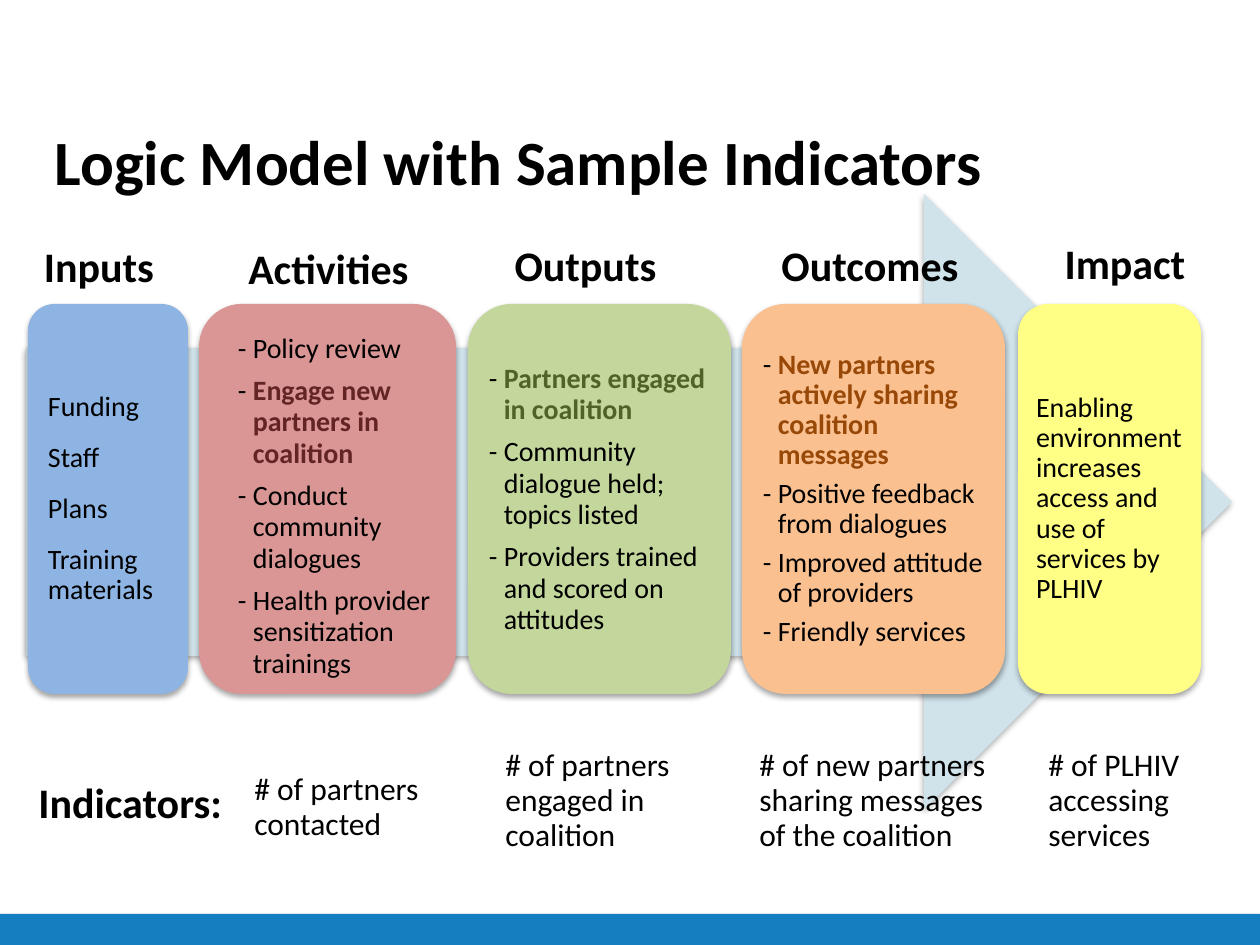
from lxml import etree
from pptx import Presentation
from pptx.dml.color import RGBColor
from pptx.enum.shapes import MSO_SHAPE
from pptx.enum.text import MSO_ANCHOR, MSO_AUTO_SIZE, PP_ALIGN
from pptx.oxml.ns import qn
from pptx.util import Emu, Pt

RECTANGLE = MSO_SHAPE.RECTANGLE
ROUNDED = MSO_SHAPE.ROUNDED_RECTANGLE
RIGHT_ARROW = MSO_SHAPE.RIGHT_ARROW
TOP, MIDDLE = MSO_ANCHOR.TOP, MSO_ANCHOR.MIDDLE
LEFT, CENTER = PP_ALIGN.LEFT, PP_ALIGN.CENTER
NO_FIT, GROW = MSO_AUTO_SIZE.NONE, MSO_AUTO_SIZE.SHAPE_TO_FIT_TEXT

EMU_PER_PX = 914400 / 126
FONT = "Calibri"
CARD_TOP, CARD_HEIGHT = 304, 390
CORNER_INSET = 0.29289 / 6
HANGING = 15
COLORS = {
    "text": "000000", "footer": "137FC1", "arrow": "D0E3EA",
    "inputs": "8EB4E3", "activities": "D99694", "outputs": "C3D69B",
    "outcomes": "FAC090", "impact": "FFFF85",
    "activities_key": "632523", "outputs_key": "4F6228", "outcomes_key": "984807",
}

# name, left, width, insets, line spacing, space after, dashed, key item, items
CARDS = [
    ("inputs", 28, 160, (20, 16, 16, 16), 0.9, 12, False, None,
     ["Funding", "Staff", "Plans", "Training materials"]),
    ("activities", 199, 257, (39, 52, 21, 39), Pt(18), 6, True, 1,
     ["Policy review", "Engage new partners in coalition",
      "Conduct community dialogues", "Health provider sensitization trainings"]),
    ("outputs", 468, 263, (21, 21, 21, 21), Pt(18), 6, True, 0,
     ["Partners engaged in coalition", "Community dialogue held; topics listed",
      "Providers trained and scored on attitudes"]),
    ("outcomes", 742, 263, (21, 21, 21, 21), 0.9, 5, True, 0,
     ["New partners actively sharing coalition messages",
      "Positive feedback from dialogues", "Improved attitude of providers",
      "Friendly services"]),
    ("impact", 1018, 183, (18, 18, 18, 18), 0.9, 5, False, None,
     ["Enabling environment increases access and use of services by PLHIV"]),
]
HEADINGS = [
    ("Inputs", 26, 234, 146), ("Activities", 210, 236, 237),
    ("Outputs", 467, 233, 237), ("Outcomes", 746, 233, 248),
    ("Impact", 1037, 231, 176),
]
INDICATORS = [
    ("# of partners contacted", 242, 766, 212, 83),
    ("# of partners engaged in coalition", 493, 742, 222, 118),
    ("# of new partners sharing messages of the coalition", 747, 742, 281, 118),
    ("# of PLHIV accessing services", 1036, 742, 163, 118),
]


def px(length):
    """Turn pixels into EMU."""
    return Emu(round(length * EMU_PER_PX))


def color(name):
    """Look up a named colour."""
    return RGBColor.from_string(COLORS[name])


def style_font(font, size, bold=False, color_name="text"):
    """Set face, size, weight and colour."""
    font.name, font.size, font.bold = FONT, Pt(size), bold
    font.color.rgb = color(color_name)


def add_shadow(shape):
    """Give a shape a soft shadow below it."""
    effects = etree.SubElement(shape._element.spPr, qn("a:effectLst"))
    shadow = etree.SubElement(effects, qn("a:outerShdw"), blurRad="40000",
                              dist="23000", dir="5400000", rotWithShape="0")
    black = etree.SubElement(shadow, qn("a:srgbClr"), val="000000")
    etree.SubElement(black, qn("a:alpha"), val="35000")


def add_block(slide, kind, box, fill):
    """Add a filled, borderless preset shape with a shadow."""
    shape = slide.shapes.add_shape(kind, *map(px, box))
    shape.fill.solid()
    shape.fill.fore_color.rgb = color(fill)
    shape.line.fill.background()
    add_shadow(shape)
    return shape


def add_card(slide, name, left, width, insets, line_spacing, space_after, dashed, key, items):
    """Add one logic model column with its list of items."""
    shape = add_block(slide, ROUNDED, (left, CARD_TOP, width, CARD_HEIGHT), name)
    frame = shape.text_frame
    frame.word_wrap, frame.vertical_anchor = True, MIDDLE
    corner = width * CORNER_INSET
    frame.margin_left, frame.margin_top, frame.margin_right, frame.margin_bottom = (
        px(inset - corner) for inset in insets)
    for index, item in enumerate(items):
        paragraph = frame.paragraphs[0] if index == 0 else frame.add_paragraph()
        paragraph.alignment = LEFT
        paragraph.line_spacing = line_spacing
        paragraph.space_after = Pt(space_after)
        if dashed:
            properties = paragraph._p.get_or_add_pPr()
            properties.set("marL", str(px(HANGING)))
            properties.set("indent", str(-px(HANGING)))
        style_font(paragraph.font, 16)
        if index == key:
            style_font_run = paragraph.add_run()
            style_font_run.text = "-\t"
            style_font(style_font_run.font, 16)
            key_run = paragraph.add_run()
            key_run.text = item
            style_font(key_run.font, 16, True, f"{name}_key")
        else:
            paragraph.add_run().text = f"-\t{item}" if dashed else item


def add_label(slide, text, box, size, bold=False, alignment=LEFT, line_spacing=None):
    """Add a wrapped text box of one paragraph."""
    frame = slide.shapes.add_textbox(*map(px, box)).text_frame
    frame.word_wrap, frame.auto_size = True, GROW
    paragraph = frame.paragraphs[0]
    paragraph.text, paragraph.alignment = text, alignment
    paragraph.line_spacing = line_spacing
    style_font(paragraph.font, size, bold)


def set_title(slide, text, box):
    """Place and format the title placeholder."""
    title = slide.shapes.title
    title.left, title.top, title.width, title.height = map(px, box)
    frame = title.text_frame
    frame.text = text
    frame.word_wrap, frame.auto_size, frame.vertical_anchor = True, NO_FIT, TOP
    frame.paragraphs[0].alignment = LEFT
    style_font(frame.paragraphs[0].font, 36, True)


def main():
    """Build the logic model slide."""
    presentation = Presentation()
    presentation.slide_width, presentation.slide_height = px(1260), px(945)
    slide = presentation.slides.add_slide(presentation.slide_layouts[5])
    add_block(slide, RECTANGLE, (0, 914, 1260, 31), "footer")
    set_title(slide, "Logic Model with Sample Indicators", (42, 116, 1134, 71))
    add_block(slide, RIGHT_ARROW, (26, 194, 1206, 616), "arrow")
    for card in CARDS:
        add_card(slide, *card)
    for text, left, top, width in HEADINGS:
        add_label(slide, text, (left, top, width, 63), 24, True, CENTER)
    add_label(slide, "Indicators:", (26, 770, 226, 63), 24, True)
    for text, *box in INDICATORS:
        add_label(slide, text, box, 18, line_spacing=Pt(20))
    presentation.save("out.pptx")


if __name__ == "__main__":
    main()
